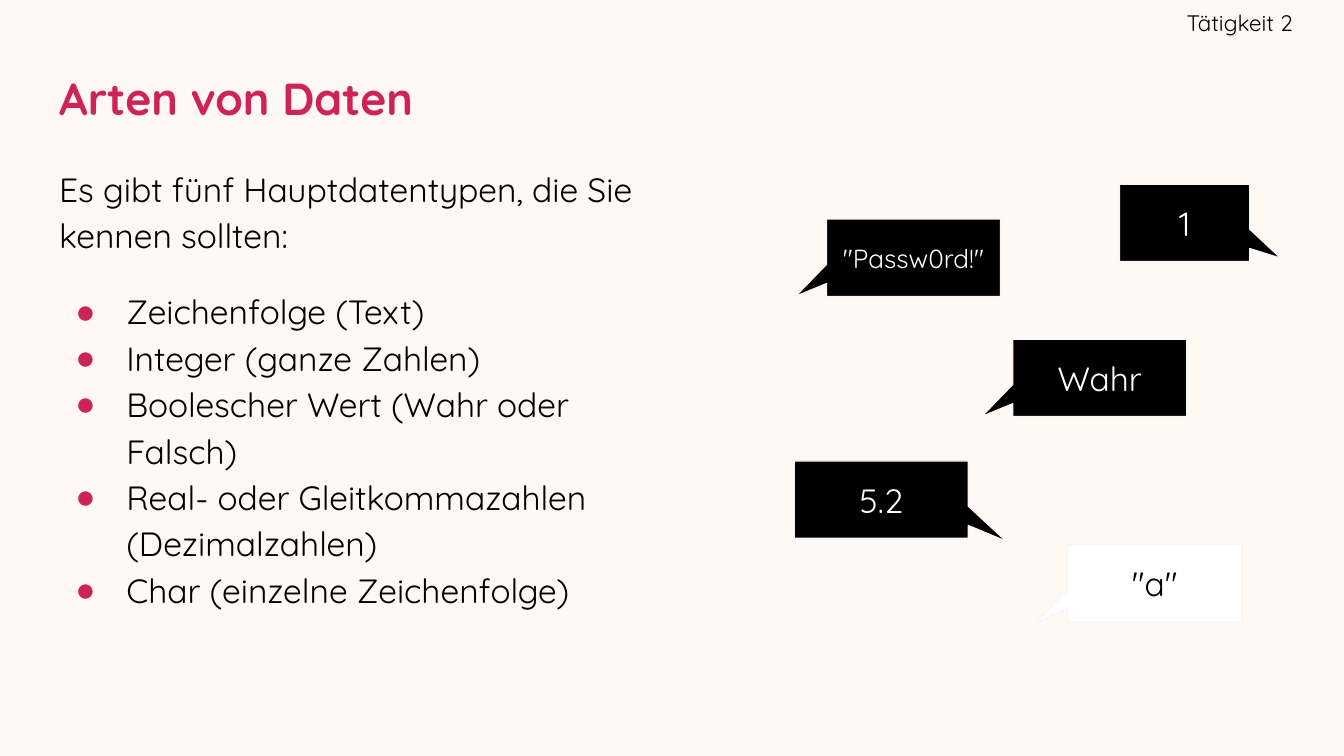
from dataclasses import dataclass

import lxml.etree
import pptx
import pptx.dml.color
import pptx.enum.shapes
import pptx.enum.text
import pptx.oxml.ns
import pptx.util

RGB = pptx.dml.color.RGBColor
ALIGN = pptx.enum.text.PP_ALIGN
ANCHOR = pptx.enum.text.MSO_ANCHOR

CREAM = RGB(0xFF, 0xF8, 0xF3)
PINK = RGB(0xCD, 0x23, 0x55)
BLACK = RGB(0, 0, 0)
WHITE = RGB(0xFF, 0xFF, 0xFF)
OUTLINE = RGB(0xF7, 0xF6, 0xFB)
FONT = "Quicksand"
WIDTH = pptx.util.Inches(10)
HEIGHT = WIDTH * 9 // 16
INSET = pptx.util.Inches(0.1)


@dataclass(frozen=True)
class Area:
    """A rectangle in percent of the slide's width and height."""
    left: float
    top: float
    width: float
    height: float

    def box(self) -> tuple[int, int, int, int]:
        return (int(WIDTH * self.left / 100), int(HEIGHT * self.top / 100),
                int(WIDTH * self.width / 100), int(HEIGHT * self.height / 100))


@dataclass(frozen=True)
class Example:
    """A speech bubble with a sample value; tail is relative to its centre."""
    value: str
    left: float
    top: float
    tail: tuple[float, float] = (-0.68, 0.5)
    width: float = 12.95
    size: int = 18
    fill: RGB = BLACK
    color: RGB = WHITE


def place(shape, area: Area) -> None:
    shape.left, shape.top, shape.width, shape.height = area.box()


def prepare_frame(frame, anchor=ANCHOR.MIDDLE, right: int = INSET) -> None:
    frame.word_wrap = True
    frame.auto_size = pptx.enum.text.MSO_AUTO_SIZE.NONE
    frame.vertical_anchor = anchor
    frame.margin_left = frame.margin_top = frame.margin_bottom = INSET
    frame.margin_right = right


def write(paragraph, text: str, *, size: int = 18, color: RGB = BLACK,
          bold: bool = False, align=ALIGN.LEFT, spacing: float = 1.0,
          before: int = 0) -> None:
    run = paragraph.add_run()
    run.text = text
    run.font.name = FONT
    run.font.size = pptx.util.Pt(size)
    run.font.bold = bold
    run.font.color.rgb = color
    paragraph.alignment = align
    paragraph.line_spacing = spacing
    paragraph.space_before = pptx.util.Pt(before)


def set_bullet(paragraph, char: str = "") -> None:
    """Give the paragraph a pink bullet, or none if char is empty."""
    def add(parent, tag: str, **attributes: str):
        return lxml.etree.SubElement(parent, pptx.oxml.ns.qn(tag), attributes)

    properties = paragraph._p.get_or_add_pPr()
    properties.set("marL", str(pptx.util.Inches(0.5 if char else 0)))
    properties.set("indent", str(pptx.util.Inches(-0.38 if char else 0)))
    if char:
        add(add(properties, "a:buClr"), "a:srgbClr", val=str(PINK))
        add(properties, "a:buChar", char=char)
    else:
        add(properties, "a:buNone")


def draw_example(slide, example: Example) -> None:
    area = Area(example.left, example.top, example.width, 10.25)
    bubble = slide.shapes.add_shape(
        pptx.enum.shapes.MSO_SHAPE.RECTANGULAR_CALLOUT, *area.box())
    bubble.adjustments[0], bubble.adjustments[1] = example.tail
    bubble.shadow.inherit = False
    bubble.fill.solid()
    bubble.fill.fore_color.rgb = example.fill
    bubble.line.color.rgb = OUTLINE
    bubble.line.width = pptx.util.Pt(0.75)
    prepare_frame(bubble.text_frame)
    write(bubble.text_frame.paragraphs[0], example.value, size=example.size,
          color=example.color, align=ALIGN.CENTER)


INTRO = "Es gibt fünf Hauptdatentypen, die Sie kennen sollten:"
DATA_TYPES = [
    "Zeichenfolge (Text)",
    "Integer (ganze Zahlen)",
    "Boolescher Wert (Wahr oder Falsch)",
    "Real- oder Gleitkommazahlen (Dezimalzahlen)",
    "Char (einzelne Zeichenfolge)",
]
EXAMPLES = [
    Example("1", 83.3, 24.36, tail=(0.74, 0.46), width=9.7),
    Example('"Passw0rd!"', 61.5, 28.98, size=14),
    Example("Wahr", 75.35, 44.88),
    Example("5.2", 59.1, 60.98, tail=(0.72, 0.54)),
    Example('"a"', 79.45, 72.05, fill=WHITE, color=BLACK),
]


def main() -> None:
    presentation = pptx.Presentation()
    presentation.slide_width, presentation.slide_height = WIDTH, HEIGHT
    slide = presentation.slides.add_slide(presentation.slide_layouts[1])
    slide.background.fill.solid()
    slide.background.fill.fore_color.rgb = CREAM

    # Introduction and list of data types
    body = slide.placeholders[1]
    place(body, Area(3.4, 19.76, 44.8, 71.11))
    prepare_frame(body.text_frame, ANCHOR.TOP)
    intro = body.text_frame.paragraphs[0]
    write(intro, INTRO, spacing=1.15)
    set_bullet(intro)
    for index, data_type in enumerate(DATA_TYPES):
        item = body.text_frame.add_paragraph()
        write(item, data_type, spacing=1.15, before=0 if index else 16)
        set_bullet(item, "●")

    # Title
    title = slide.shapes.title
    place(title, Area(3.4, 6.1, 93.2, 13.51))
    prepare_frame(title.text_frame)
    write(title.text_frame.paragraphs[0], "Arten von Daten", size=24,
          color=PINK, bold=True)

    # Activity label in the top right corner
    activity = slide.shapes.add_textbox(*Area(74.8, 0, 21.4, 6.05).box())
    prepare_frame(activity.text_frame, right=0)
    write(activity.text_frame.paragraphs[0], "Tätigkeit 2", size=12,
          align=ALIGN.RIGHT)

    # Sample values
    for example in EXAMPLES:
        draw_example(slide, example)

    presentation.save("out.pptx")


if __name__ == "__main__":
    main()
